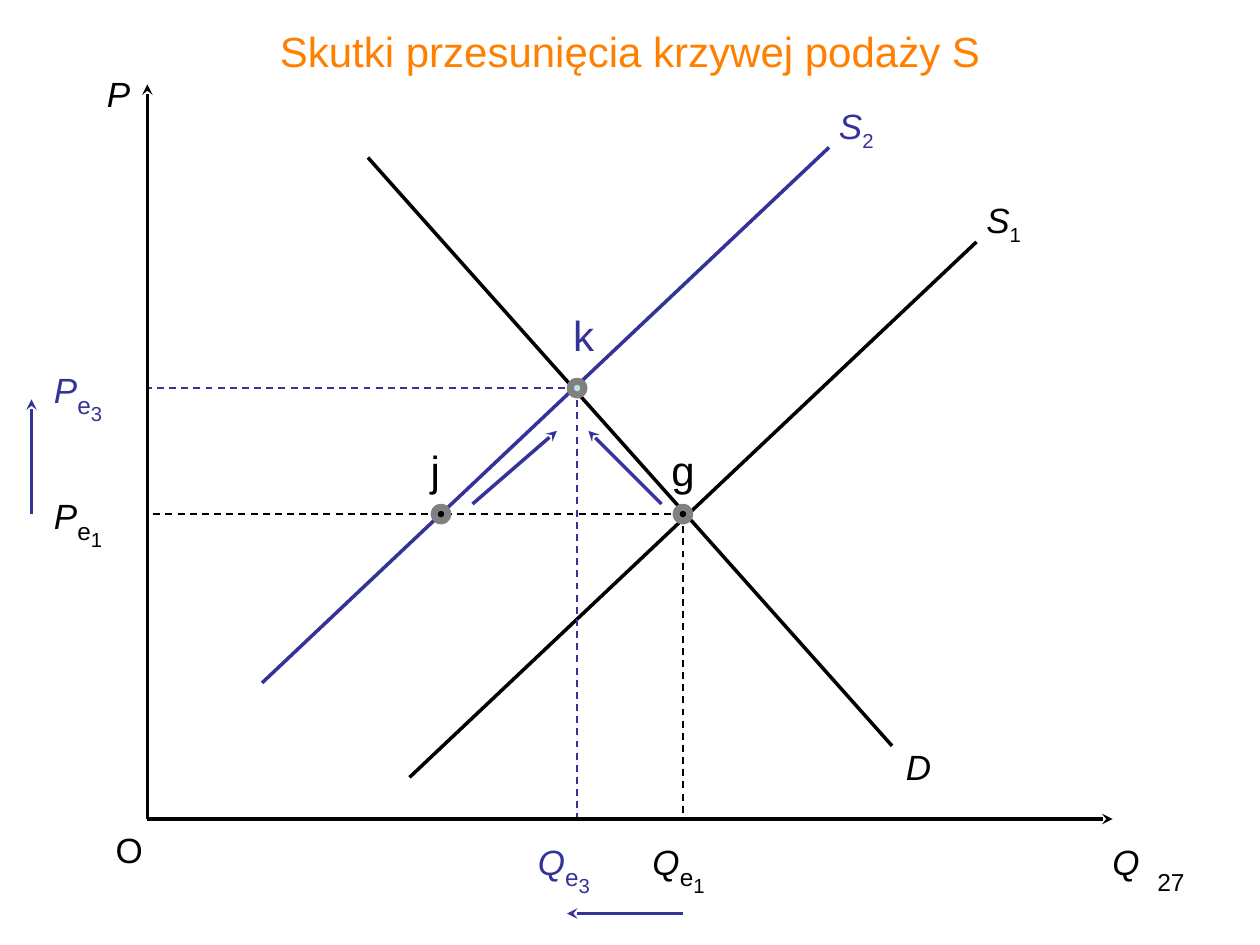
from pptx import Presentation
from pptx.dml.color import RGBColor
from pptx.enum.dml import MSO_LINE
from pptx.enum.shapes import MSO_CONNECTOR, MSO_SHAPE
from pptx.enum.text import MSO_ANCHOR, PP_ALIGN
from pptx.oxml.ns import qn
from pptx.util import Inches, Pt
from lxml import etree

LEFT, CENTER, RIGHT = PP_ALIGN.LEFT, PP_ALIGN.CENTER, PP_ALIGN.RIGHT
TOP, MIDDLE = MSO_ANCHOR.TOP, MSO_ANCHOR.MIDDLE
STRAIGHT, OVAL, DASH = MSO_CONNECTOR.STRAIGHT, MSO_SHAPE.OVAL, MSO_LINE.DASH
COLORS = {"black": "000000", "blue": "333399", "orange": "FF8000",
          "gray": "808080", "pale": "BBE0E3"}

presentation = Presentation()
presentation.slide_width, presentation.slide_height = Inches(10), Inches(7.5)
slide = presentation.slides.add_slide(presentation.slide_layouts[6])


def add_line(start, end, color, width=2, dashed=False, arrow=False):
    """Draw a straight line; an arrow points at its end."""
    points = [Inches(value) for value in (*start, *end)]
    line = slide.shapes.add_connector(STRAIGHT, *points)
    line.line.color.rgb = RGBColor.from_string(COLORS[color])
    line.line.width = Pt(width)
    if dashed:
        line.line.dash_style = DASH
    if arrow:
        etree.SubElement(line.line._get_or_add_ln(), qn("a:tailEnd"), type="stealth")
    etree.SubElement(line._element.spPr, qn("a:effectLst"))


def add_text(box, runs, color, align=LEFT, anchor=TOP, wrap=False):
    """Write runs of (text, size, italic, baseline in percent)."""
    shape = slide.shapes.add_textbox(*[Inches(value) for value in box])
    frame = shape.text_frame
    frame.word_wrap, frame.vertical_anchor = wrap, anchor
    paragraph = frame.paragraphs[0]
    paragraph.alignment = align
    for text, size, italic, baseline in runs:
        run = paragraph.add_run()
        run.text = text
        formats = {"name": "Arial", "size": Pt(size), "italic": italic}
        for name, value in formats.items():
            setattr(run.font, name, value)
        run.font.color.rgb = RGBColor.from_string(COLORS[color])
        if baseline:
            run._r.get_or_add_rPr().set("baseline", str(baseline * 1000))


# Key positions on the diagram
origin = (1.17, 6.5)
point_j, point_k, point_g = (3.5, 4.08), (4.58, 3.08), (5.42, 4.08)

# Demand and supply curves
add_line((7.08, 5.92), (2.92, 1.25), "black")
add_line((7.75, 1.92), (3.25, 6.17), "black")
add_line((6.58, 1.17), (2.08, 5.42), "blue")

# Dashed guides from each equilibrium to both axes
for point, color in ((point_g, "black"), (point_k, "blue")):
    for foot in ((origin[0], point[1]), (point[0], origin[1])):
        add_line(point, foot, color, width=1, dashed=True)

# Axes
for tip in ((8.83, 6.5), (1.17, 0.67)):
    add_line(origin, tip, "black", arrow=True)

# Equilibrium points
diameter = 0.11
for (x, y), color in ((point_j, "black"), (point_k, "pale"), (point_g, "black")):
    dot = slide.shapes.add_shape(OVAL, Inches(x - diameter / 2), Inches(y - diameter / 2),
                                 Inches(diameter), Inches(diameter))
    dot.shadow.inherit = False
    dot.fill.solid()
    dot.fill.fore_color.rgb = RGBColor.from_string(COLORS[color])
    dot.line.color.rgb = RGBColor.from_string(COLORS["gray"])
    dot.line.width = Pt(4)

# Arrows showing the shift
for start, end in (((0.25, 4.08), (0.25, 3.17)), ((5.42, 7.25), (4.5, 7.25)),
                   ((3.75, 4), (4.42, 3.42)), ((5.25, 4), (4.67, 3.42))):
    add_line(start, end, "blue", arrow=True)

# Equilibrium prices and quantities
for letter, index, left, top, color in (
        ("P", "1", 0.33, 3.82, "black"), ("P", "3", 0.33, 2.82, "blue"),
        ("Q", "3", 4.17, 6.57, "blue"), ("Q", "1", 5.08, 6.57, "black")):
    runs = [(letter, 20, True, 0), ("e", 24, False, -25), (index, 20, False, -50)]
    add_text((left, top, 0.75, 0.43), runs, color, wrap=True)

# Axis letters
for letter, left, top, width, italic in (("P", 0.75, 0.53, 0.37, True),
                                         ("Q", 8.73, 6.62, 0.42, True),
                                         ("O", 0.82, 6.53, 0.42, False)):
    add_text((left, top, width, 0.43), [(letter, 20, italic, 0)], "black")

# Curve names
for letter, index, left, top, width, color in (("D", "", 7.09, 5.87, 0.4, "black"),
                                               ("S", "1", 7.72, 1.53, 0.49, "black"),
                                               ("S", "2", 6.55, 0.78, 0.49, "blue")):
    runs = [(letter, 20, True, 0)]
    if index:
        runs.append((index, 20, False, -25))
    add_text((left, top, width, 0.43), runs, color, align=CENTER)

# Point names
for letter, left, top, width, color in (("j", 3.32, 3.48, 0.28, "black"),
                                        ("g", 5.23, 3.48, 0.39, "black"),
                                        ("k", 4.45, 2.41, 0.37, "blue")):
    add_text((left, top, width, 0.5), [(letter, 24, False, 0)], color)

# Title and page number
add_text((0.75, 0, 8.5, 0.81), [("Skutki przesunięcia krzywej podaży S", 24, False, 0)],
         "orange", align=CENTER, anchor=MIDDLE, wrap=True)
add_text((7.17, 6.83, 2.33, 0.52), [("27", 14, False, 0)], "black", align=RIGHT, wrap=True)

presentation.save("out.pptx")
